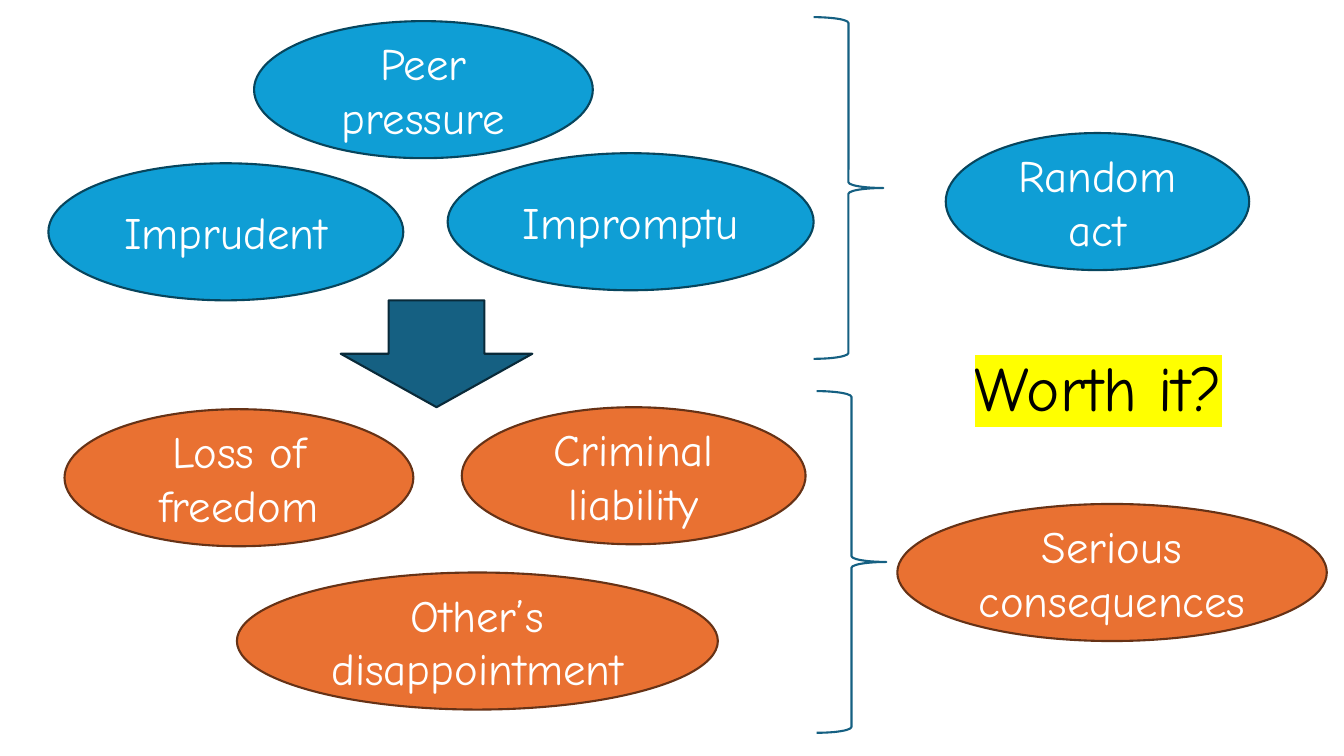
from lxml import etree
from pptx import Presentation
from pptx.dml.color import RGBColor
from pptx.enum.shapes import MSO_SHAPE as Shape
from pptx.enum.text import MSO_ANCHOR as Anchor, MSO_AUTO_SIZE as AutoSize, PP_ALIGN as Align
from pptx.oxml.ns import qn
from pptx.util import Inches, Pt

FONT = "Comic Neue"
WHITE = RGBColor(0xFF, 0xFF, 0xFF)
BLACK = RGBColor(0x00, 0x00, 0x00)
YELLOW = RGBColor(0xFF, 0xFF, 0x00)
BLUE = RGBColor(0x0F, 0x9E, 0xD5)
BLUE_EDGE = RGBColor(0x07, 0x45, 0x5D)
ORANGE = RGBColor(0xE9, 0x71, 0x32)
ORANGE_EDGE = RGBColor(0x66, 0x32, 0x16)
TEAL = RGBColor(0x15, 0x60, 0x82)
TEAL_EDGE = RGBColor(0x09, 0x2A, 0x39)

OVAL_HEIGHT = 1.36
BRACE_WIDTH, BRACE_HEIGHT = 0.69, 3.39


def write_text(frame, text, size=32, color=WHITE, highlight=None):
    frame.word_wrap = True
    frame.vertical_anchor = Anchor.MIDDLE
    para = frame.paragraphs[0]
    para.alignment = Align.CENTER
    span = para.add_run()
    span.text = text
    span.font.size = Pt(size)
    span.font.name = FONT
    span.font.color.rgb = color
    if highlight is not None:
        marker = etree.Element(qn("a:highlight"))
        etree.SubElement(marker, qn("a:srgbClr"), val=str(highlight))
        # The schema wants the highlight directly after the text fill.
        span.font.fill._xPr.find(qn("a:solidFill")).addnext(marker)


def add_preset(page, kind, left, top, width, height, edge, fill=None):
    shape = page.shapes.add_shape(
        kind, Inches(left), Inches(top), Inches(width), Inches(height))
    shape.shadow.inherit = False
    if fill is None:
        shape.fill.background()
    else:
        shape.fill.solid()
        shape.fill.fore_color.rgb = fill
    shape.line.color.rgb = edge
    shape.line.width = Pt(1.5)
    return shape


def add_braced_group(page, left, top, ovals, brace_offset, fill, edge):
    """Place ovals (text, x, y, width) and a brace relative to left and top."""
    for text, x, y, width in ovals:
        oval = add_preset(page, Shape.OVAL, left + x, top + y,
                          width, OVAL_HEIGHT, edge, fill)
        write_text(oval.text_frame, text)
    add_preset(page, Shape.RIGHT_BRACE, left + brace_offset, top,
               BRACE_WIDTH, BRACE_HEIGHT, TEAL)


def add_question(page, left, top, width, height):
    box = page.shapes.add_textbox(
        Inches(left), Inches(top), Inches(width), Inches(height))
    write_text(box.text_frame, "Worth it?", size=45, color=BLACK, highlight=YELLOW)
    box.text_frame.vertical_anchor = Anchor.TOP
    box.text_frame.auto_size = AutoSize.SHAPE_TO_FIT_TEXT


def main():
    deck = Presentation()
    deck.slide_width, deck.slide_height = Inches(13.33), Inches(7.5)
    page = deck.slides.add_slide(deck.slide_layouts[6])

    causes = [
        ("Peer pressure", 2.04, 0.04, 3.36),
        ("Imprudent", 0, 1.45, 3.52),
        ("Impromptu", 3.96, 1.35, 3.63),
        ("Random act", 8.9, 1.15, 3.01),
    ]
    consequences = [
        ("Loss of freedom", 0, 0.18, 3.46),
        ("Criminal liability", 3.94, 0.16, 3.41),
        ("Other’s disappointment", 1.71, 1.8, 4.77),
        ("Serious consequences", 8.26, 1.12, 4.26),
    ]
    add_braced_group(page, 0.48, 0.17, causes, 7.59, BLUE, BLUE_EDGE)
    add_preset(page, Shape.DOWN_ARROW, 3.38, 2.98, 1.9, 1.06, TEAL_EDGE, TEAL)
    add_braced_group(page, 0.64, 3.88, consequences, 7.46, ORANGE, ORANGE_EDGE)
    add_question(page, 9.22, 3.41, 3.35, 0.86)

    deck.save("out.pptx")


if __name__ == "__main__":
    main()
